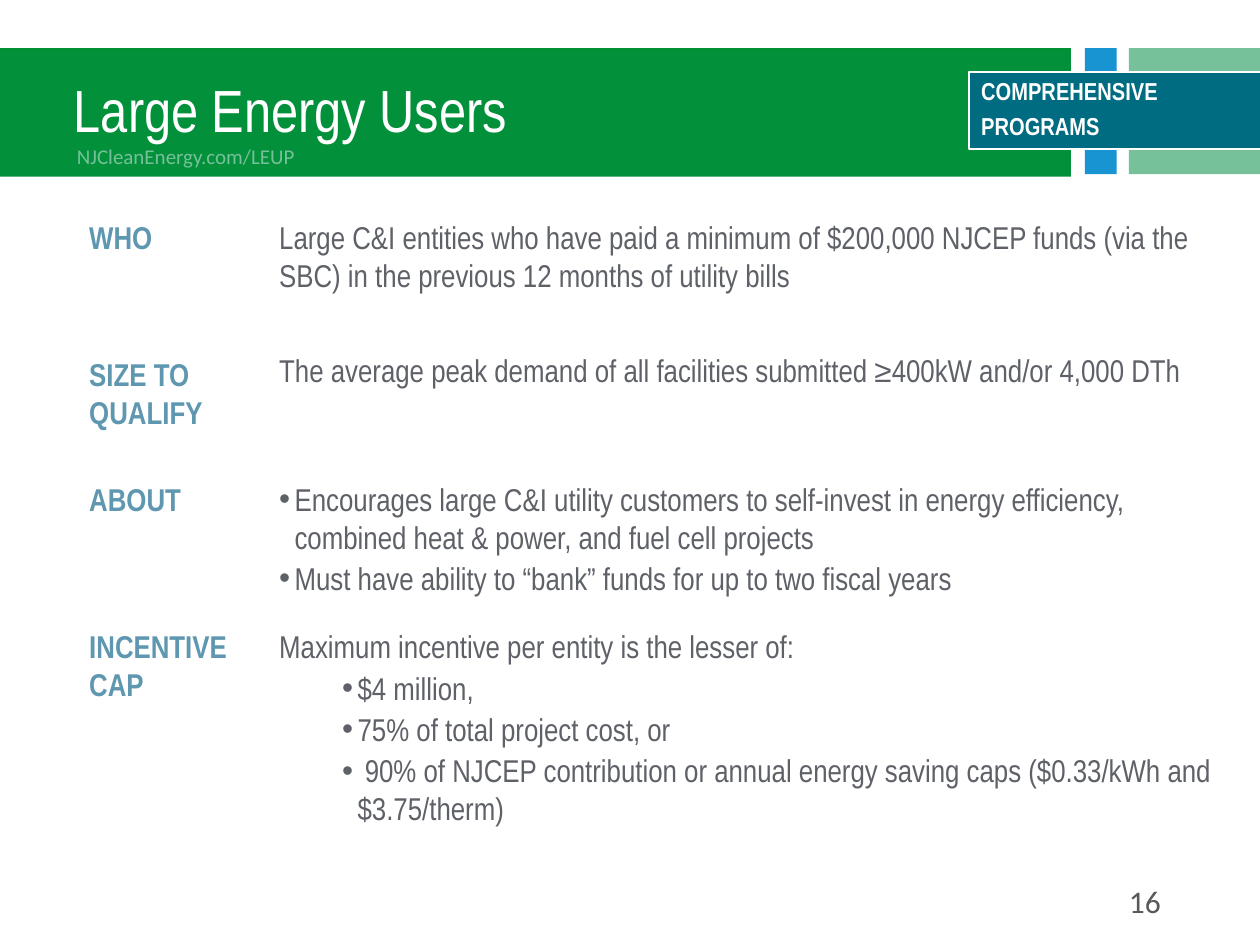
from dataclasses import dataclass
from typing import Any

from lxml import etree
from pptx import Presentation
from pptx.dml.color import RGBColor
from pptx.enum.shapes import MSO_SHAPE
from pptx.enum.text import MSO_ANCHOR, MSO_AUTO_SIZE, PP_ALIGN
from pptx.oxml.ns import qn
from pptx.util import Cm, Pt

RECTANGLE = MSO_SHAPE.RECTANGLE
MIDDLE, TOP = MSO_ANCHOR.MIDDLE, MSO_ANCHOR.TOP
LEFT, RIGHT = PP_ALIGN.LEFT, PP_ALIGN.RIGHT
FIT_SHAPE, NO_FIT = MSO_AUTO_SIZE.SHAPE_TO_FIT_TEXT, MSO_AUTO_SIZE.NONE

WHITE = RGBColor(0xFF, 0xFF, 0xFF)
BLUE = RGBColor(0x18, 0x94, 0xD2)
PALE_GREEN = RGBColor(0x77, 0xC1, 0x9A)
BAND_GREEN = RGBColor(0x02, 0x90, 0x35)
TITLE_GREEN = RGBColor(0x02, 0x90, 0x3A)
TEAL = RGBColor(0x00, 0x6C, 0x82)
LABEL_BLUE = RGBColor(0x5E, 0x97, 0xAF)
BODY_GRAY = RGBColor(0x5E, 0x61, 0x67)
NUMBER_GRAY = RGBColor(0x59, 0x59, 0x59)

NARROW, CALIBRI = "Arial Narrow", "Calibri"
TITLE_FONT = {"name": NARROW, "size": Pt(34), "color": WHITE}
TAG_FONT = {"name": NARROW, "size": Pt(14), "bold": True, "color": WHITE}
LABEL_FONT = {"name": NARROW, "size": Pt(18), "bold": True, "color": LABEL_BLUE}
BODY_FONT = {"name": NARROW, "size": Pt(18), "color": BODY_GRAY}
ADDRESS_FONT = {"name": CALIBRI, "size": Pt(12), "color": PALE_GREEN}
NUMBER_FONT = {"name": CALIBRI, "size": Pt(18), "color": NUMBER_GRAY}

LABEL_LEFT, BODY_LEFT = 1.55, 5.38
LABEL_WIDTH, BODY_WIDTH = 4.1, 19.46
BAND_TOP, BAND_HEIGHT = 0.97, 2.54
HANGING = 0.31


@dataclass(frozen=True)
class Box:
    left: float
    top: float
    width: float
    height: float

    def lengths(self) -> tuple:
        return Cm(self.left), Cm(self.top), Cm(self.width), Cm(self.height)


@dataclass(frozen=True)
class Line:
    text: str
    bullet_margin: float = 0


@dataclass(frozen=True)
class Topic:
    label: str
    label_top: float
    label_height: float
    body_top: float
    body_height: float
    lines: tuple[Line, ...]
    line_spacing: float = 1.0


TOPICS = (
    Topic("WHO", 4.27, 1.04, 4.27, 1.8, (
        Line("Large C&I entities who have paid a minimum of $200,000 NJCEP funds "
             "(via the SBC) in the previous 12 months of utility bills"),
    )),
    Topic("SIZE TO QUALIFY", 7.04, 1.8, 6.88, 1.88, (
        Line("The average peak demand of all facilities submitted ≥400kW and/or 4,000 DTh"),
    ), 1.1),
    Topic("ABOUT", 9.55, 1.04, 9.55, 2.64, (
        Line("Encourages large C&I utility customers to self-invest in energy efficiency, "
             "combined heat & power, and fuel cell projects", HANGING),
        Line("Must have ability to “bank” funds for up to two fiscal years", HANGING),
    )),
    Topic("INCENTIVE CAP", 12.52, 1.8, 12.52, 4.32, (
        Line("Maximum incentive per entity is the lesser of:"),
        Line("$4 million,", 1.58),
        Line("75% of total project cost, or", 1.58),
        Line(" 90% of NJCEP contribution or annual energy saving caps "
             "($0.33/kWh and $3.75/therm)", 1.58),
    )),
)


def apply_format(target: Any, values: dict) -> None:
    for name, value in values.items():
        if name == "color":
            target.color.rgb = value
        else:
            setattr(target, name, value)


def add_bullet(paragraph: Any, margin: float) -> None:
    properties = paragraph._p.get_or_add_pPr()
    properties.set("marL", str(Cm(margin)))
    properties.set("indent", str(-Cm(HANGING)))
    etree.SubElement(properties, qn("a:buFont")).set("typeface", "Arial")
    etree.SubElement(properties, qn("a:buChar")).set("char", "•")


def write_lines(shape: Any, lines: tuple[Line, ...], font: dict,
                paragraph_format: dict, frame_format: dict) -> None:
    frame = shape.text_frame
    apply_format(frame, {"word_wrap": True} | frame_format)
    for index, line in enumerate(lines):
        paragraph = frame.add_paragraph() if index else frame.paragraphs[0]
        apply_format(paragraph, {"alignment": LEFT} | paragraph_format)
        if line.bullet_margin:
            add_bullet(paragraph, line.bullet_margin)
        run = paragraph.add_run()
        run.text = line.text
        apply_format(run.font, font)


def add_rectangle(slide: Any, box: Box, color: RGBColor) -> Any:
    shape = slide.shapes.add_shape(RECTANGLE, *box.lengths())
    shape.shadow.inherit = False
    shape.fill.solid()
    shape.fill.fore_color.rgb = color
    shape.line.fill.background()
    return shape


def add_text(slide: Any, box: Box, lines: tuple[Line, ...], font: dict,
             paragraph_format: dict, frame_format: dict) -> None:
    shape = slide.shapes.add_textbox(*box.lengths())
    write_lines(shape, lines, font, paragraph_format, frame_format)


def add_title(slide: Any) -> None:
    title = slide.shapes.title
    title.left, title.top, title.width, title.height = Box(-0.03, 1.02, 21.62, 2.54).lengths()
    title.fill.solid()
    title.fill.fore_color.rgb = TITLE_GREEN
    write_lines(title, (Line("Large Energy Users"),), TITLE_FONT, {"line_spacing": 0.9},
                {"vertical_anchor": MIDDLE, "auto_size": NO_FIT, "margin_left": Cm(1.52)})
    slide.shapes._spTree.append(title._element)


def add_program_tag(slide: Any) -> None:
    tag = add_rectangle(slide, Box(19.53, 1.45, 6.1, 1.55), TEAL)
    tag.line.color.rgb = WHITE
    tag.line.width = Pt(1)
    write_lines(tag, (Line("COMPREHENSIVE"), Line("PROGRAMS")), TAG_FONT,
                {"line_spacing": 0.9, "space_after": Pt(5)},
                {"vertical_anchor": MIDDLE, "margin_top": Cm(0.15), "margin_bottom": Cm(0.15)})


def add_topic(slide: Any, topic: Topic) -> None:
    fitted = {"auto_size": FIT_SHAPE, "vertical_anchor": TOP}
    add_text(slide, Box(LABEL_LEFT, topic.label_top, LABEL_WIDTH, topic.label_height),
             (Line(topic.label),), LABEL_FONT, {}, fitted)
    add_text(slide, Box(BODY_LEFT, topic.body_top, BODY_WIDTH, topic.body_height),
             topic.lines, BODY_FONT,
             {"space_after": Pt(2), "line_spacing": topic.line_spacing}, fitted)


def main() -> None:
    presentation = Presentation()
    presentation.slide_width, presentation.slide_height = Cm(25.4), Cm(19.05)
    slide = presentation.slides.add_slide(presentation.slide_layouts[5])
    for left, width, color in ((21.87, 0.64, BLUE), (22.76, 2.64, PALE_GREEN),
                               (-0.03, 21.62, BAND_GREEN)):
        add_rectangle(slide, Box(left, BAND_TOP, width, BAND_HEIGHT), color)
    add_title(slide)
    add_text(slide, Box(17.93, 17.65, 5.72, 1.02), (Line("16"),), NUMBER_FONT,
             {"alignment": RIGHT}, {"vertical_anchor": MIDDLE})
    add_text(slide, Box(1.3, 2.77, 10.26, 0.76), (Line("NJCleanEnergy.com/LEUP"),),
             ADDRESS_FONT, {}, {"auto_size": FIT_SHAPE})
    for topic in TOPICS:
        add_topic(slide, topic)
    add_program_tag(slide)
    presentation.save("out.pptx")


if __name__ == "__main__":
    main()
